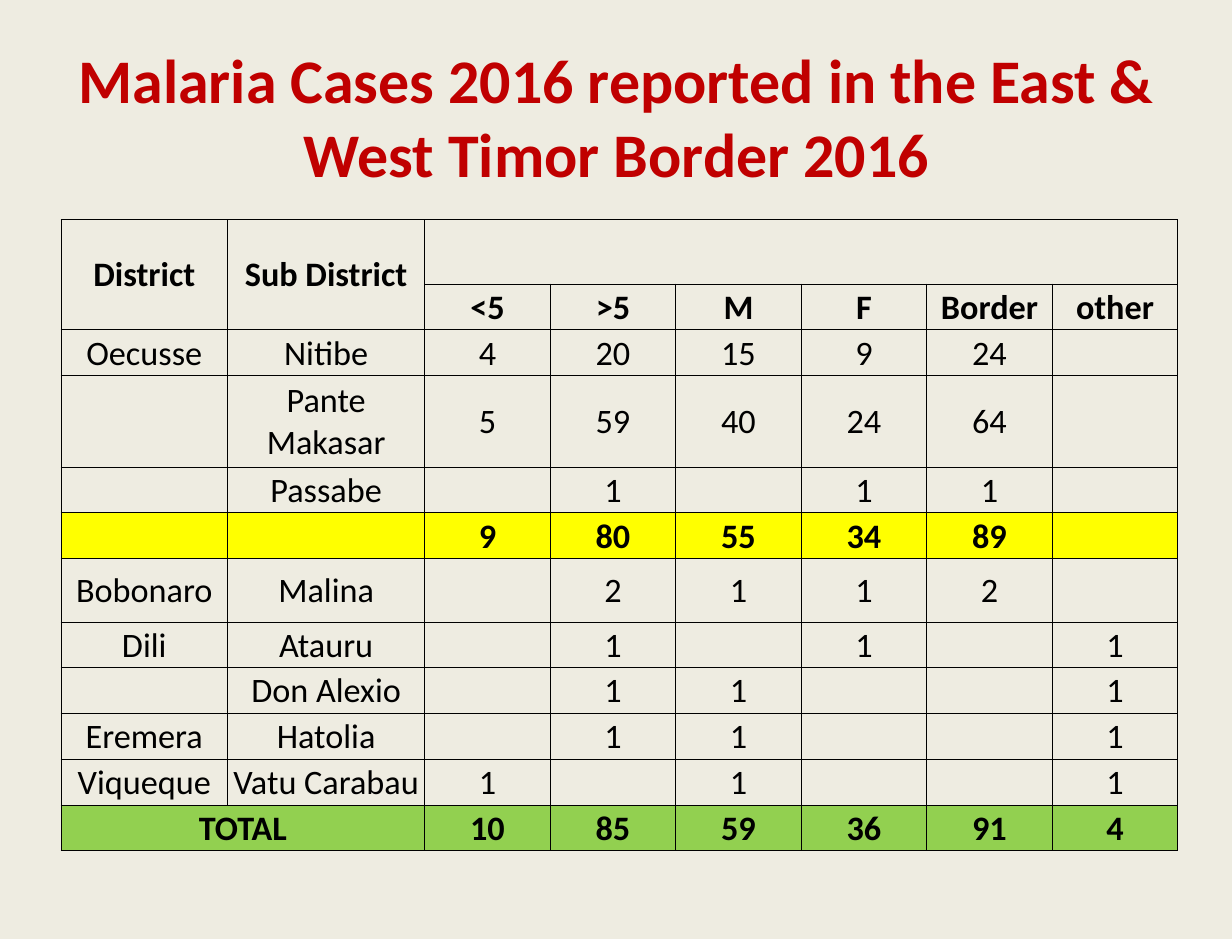
import pptx
import pptx.dml.color
import pptx.enum.text
import pptx.oxml
import pptx.oxml.ns
import pptx.util

Inches = pptx.util.Inches
Pt = pptx.util.Pt
RGB = pptx.dml.color.RGBColor
CREAM = RGB(0xEE, 0xEC, 0xE1)
RED = RGB(0xC0, 0x00, 0x00)
BLACK = RGB(0x00, 0x00, 0x00)
YELLOW = RGB(0xFF, 0xFF, 0x00)
GREEN = RGB(0x92, 0xD0, 0x50)

FONT = "Calibri"
TITLE = "Malaria Cases 2016 reported in the East & West Timor Border 2016"
WIDTHS = [1.42, 1.68] + [1.07] * 6
HEIGHT = 0.39
TALL = {0: 0.55, 3: 0.78, 6: 0.54}
FILLS = {5: YELLOW, 11: GREEN}
BOLD = {0, 1, 5, 11}
SPANS = [((0, 0), (1, 0)), ((0, 1), (1, 1)), ((0, 2), (0, 7)), ((11, 0), (11, 1))]
ROWS = [
    ["District", "Sub District", "", "", "", "", "", ""],
    ["", "", "<5", ">5", "M", "F", "Border", "other"],
    ["Oecusse", "Nitibe", "4", "20", "15", "9", "24", ""],
    ["", "Pante Makasar", "5", "59", "40", "24", "64", ""],
    ["", "Passabe", "", "1", "", "1", "1", ""],
    ["", "", "9", "80", "55", "34", "89", ""],
    ["Bobonaro", "Malina", "", "2", "1", "1", "2", ""],
    ["Dili", "Atauru", "", "1", "", "1", "", "1"],
    ["", "Don Alexio", "", "1", "1", "", "", "1"],
    ["Eremera", "Hatolia", "", "1", "1", "", "", "1"],
    ["Viqueque", "Vatu Carabau", "1", "", "1", "", "", "1"],
    ["TOTAL", "", "10", "85", "59", "36", "91", "4"],
]


def set_text(frame, text, size, color, bold):
    frame.text = text
    para = frame.paragraphs[0]
    para.alignment = pptx.enum.text.PP_ALIGN.CENTER
    font = para.font
    font.name, font.size, font.bold = FONT, Pt(size), bold
    font.color.rgb = color


def add_title(slide):
    box = slide.shapes.add_textbox(Inches(0.53), Inches(0.32), Inches(9.45), Inches(1.33))
    frame = box.text_frame
    frame.word_wrap = True
    frame.vertical_anchor = pptx.enum.text.MSO_ANCHOR.MIDDLE
    frame.margin_left = frame.margin_right = Inches(0.11)
    set_text(frame, TITLE, 38, RED, True)


def add_lines(cell):
    props = cell._tc.get_or_add_tcPr()
    for place, side in enumerate(("lnL", "lnR", "lnT", "lnB")):
        line = pptx.oxml.parse_xml(
            f'<a:{side} {pptx.oxml.ns.nsdecls("a")} w="{Pt(0.5)}">'
            f'<a:solidFill><a:srgbClr val="{BLACK}"/></a:solidFill></a:{side}>'
        )
        props.insert(place, line)


def style_cell(cell, text, fill, bold):
    cell.margin_left = cell.margin_right = cell.margin_top = Inches(0.01)
    cell.margin_bottom = 0
    cell.vertical_anchor = pptx.enum.text.MSO_ANCHOR.MIDDLE
    set_text(cell.text_frame, text, 21, BLACK, bold)
    if fill is None:
        cell.fill.background()
    else:
        cell.fill.solid()
        cell.fill.fore_color.rgb = fill
    add_lines(cell)


def add_cases(slide):
    heights = [TALL.get(row, HEIGHT) for row in range(len(ROWS))]
    table = slide.shapes.add_table(
        len(ROWS), len(WIDTHS), Inches(0.52), Inches(1.87),
        Inches(sum(WIDTHS)), Inches(sum(heights)),
    ).table
    table.first_row = table.horz_banding = False
    for col, width in zip(table.columns, WIDTHS):
        col.width = Inches(width)
    for row, height in zip(table.rows, heights):
        row.height = Inches(height)

    # Cell text, fills and borders
    for i, row in enumerate(ROWS):
        for j, text in enumerate(row):
            style_cell(table.cell(i, j), text, FILLS.get(i), i in BOLD)

    # Joined cells
    for start, end in SPANS:
        table.cell(*start).merge(table.cell(*end))


def main():
    deck = pptx.Presentation()
    deck.slide_width, deck.slide_height = Inches(10.5), Inches(8)
    slide = deck.slides.add_slide(deck.slide_layouts[6])
    slide.background.fill.solid()
    slide.background.fill.fore_color.rgb = CREAM
    add_title(slide)
    add_cases(slide)
    deck.save("out.pptx")


if __name__ == "__main__":
    main()
